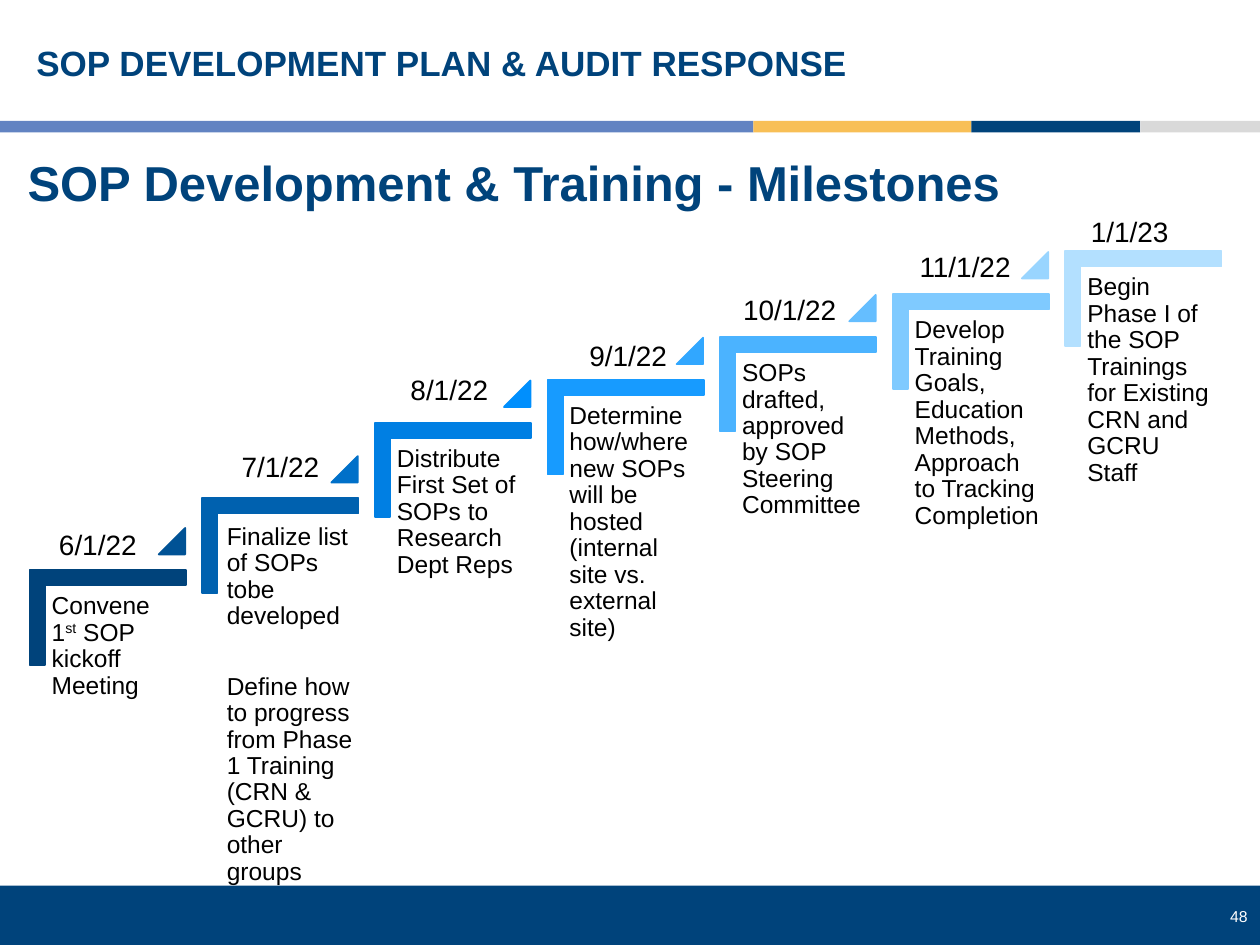
from dataclasses import dataclass

from pptx import Presentation
from pptx.dml.color import RGBColor
from pptx.enum.shapes import MSO_SHAPE
from pptx.enum.text import MSO_ANCHOR, PP_ALIGN
from pptx.util import Inches, Pt

RECT, CORNER, TRIANGLE = MSO_SHAPE.RECTANGLE, MSO_SHAPE.CORNER, MSO_SHAPE.ISOSCELES_TRIANGLE
MIDDLE, TOP = MSO_ANCHOR.MIDDLE, MSO_ANCHOR.TOP
LEFT, RIGHT = PP_ALIGN.LEFT, PP_ALIGN.RIGHT


@dataclass(frozen=True)
class Theme:
    font: str = "Arial"
    navy: str = "00437B"
    blue: str = "6283C2"
    gold: str = "F8BF56"
    grey: str = "D9D9D9"
    white: str = "FFFFFF"
    black: str = "000000"
    heading: int = 28
    title: int = 20
    date: int = 16
    body: int = 14
    number: int = 9


THEME = Theme()
TITLE = "SOP DEVELOPMENT PLAN & AUDIT RESPONSE"
HEADING = "SOP Development & Training - Milestones"
PAGE_NUMBER = "48"
BANDS = [(5.98, THEME.blue), (7.71, THEME.gold), (9.05, THEME.navy), (10, THEME.grey)]

# date, date position, bracket top, bracket colour, triangle colour, paragraphs
MILESTONES = [
    ("6/1/22", (0.37, 4.14), 4.28, "00437B", "005295", ["Convene 1^st^ SOP kickoff Meeting"]),
    ("7/1/22", (1.82, 3.52), 3.71, "0061AF", "0070C9", [
        "Finalize list of SOPs tobe developed",
        "Define how to progress from Phase 1 Training (CRN & GCRU) to other groups"]),
    ("8/1/22", (3.16, 2.91), 3.11, "007FE3", "008FFD", [
        "Distribute First Set of SOPs to Research Dept Reps"]),
    ("9/1/22", (4.58, 2.64), 2.77, "179BFF", "31A7FF", [
        "Determine how/where new SOPs will be hosted (internal site vs. external site)"]),
    ("10/1/22", (5.8, 2.27), 2.43, "4BB3FF", "65BEFF", [
        "SOPs drafted, approved by SOP Steering Committee"]),
    ("11/1/22", (7.2, 1.93), 2.09, "7FCAFF", "99D5FF", [
        "Develop Training Goals, Education Methods, Approach to Tracking Completion"]),
    ("1/1/23", (8.56, 1.65), 1.75, "B3E0FF", None, [
        "Begin Phase I of the SOP Trainings for Existing CRN and GCRU Staff"]),
]
FIRST_LEFT, STEP = 0.48, 1.37
BRACKET_SIZE = (0.75, 1.24)
BRACKET_THICKNESS = 0.161
TRIANGLE_SIZE = 0.21
PARAGRAPH_GAP = 25


def add_block(slide, preset, box, color, outlined=False):
    """Draw a flat preset shape."""
    block = slide.shapes.add_shape(preset, *map(Inches, box))
    block.shadow.inherit = False
    block.fill.solid()
    block.fill.fore_color.rgb = RGBColor.from_string(color)
    if outlined:
        block.line.color.rgb = RGBColor.from_string(color)
        block.line.width = Pt(1)
    else:
        block.line.fill.background()
    return block


def add_text(slide, box, paragraphs, size, color=THEME.black, bold=False, align=LEFT,
             anchor=TOP, spacing=None, inset=None, wrap=True):
    """Write paragraphs in which carets enclose superscripts."""
    frame = slide.shapes.add_textbox(*map(Inches, box)).text_frame
    frame.word_wrap = wrap
    frame.vertical_anchor = anchor
    if inset is not None:
        frame.margin_left = frame.margin_right = Inches(inset)
        frame.margin_top = frame.margin_bottom = Inches(inset)
    for index, text in enumerate(paragraphs):
        paragraph = frame.add_paragraph() if index else frame.paragraphs[0]
        paragraph.alignment = align
        paragraph.line_spacing = spacing
        if index:
            paragraph.space_before = Pt(PARAGRAPH_GAP)
        for part, wording in enumerate(text.split("^")):
            run = paragraph.add_run()
            run.text = wording
            run.font.name = THEME.font
            run.font.size = Pt(size)
            run.font.bold = bold
            run.font.color.rgb = RGBColor.from_string(color)
            if part % 2:
                run.font._element.set("baseline", "30000")


def add_milestone(slide, index, milestone):
    """Draw one stair with its date, bracket, triangle and wording."""
    date, date_position, top, bracket_color, triangle_color, wording = milestone
    left = FIRST_LEFT + index * STEP
    bracket = add_block(slide, CORNER, (left, top, *BRACKET_SIZE), bracket_color, True)
    bracket.rotation = 90
    bracket.adjustments[0] = bracket.adjustments[1] = BRACKET_THICKNESS
    nudge = 0.02 if len(wording) > 1 else 0
    add_text(slide, (left - 0.13 + nudge, top + 0.37 + nudge, 1.12, 0.98), wording,
             THEME.body, spacing=0.9, inset=0.06)
    if triangle_color:
        triangle = add_block(slide, TRIANGLE, (left + 0.78, top - 0.09, TRIANGLE_SIZE, TRIANGLE_SIZE),
                             triangle_color, True)
        triangle.adjustments[0] = 1
    add_text(slide, (*date_position, 1.03, 0.37), [date], THEME.date)


def main():
    """Build and save the milestones slide."""
    deck = Presentation()
    deck.slide_width, deck.slide_height = Inches(10), Inches(7.5)
    slide = deck.slides.add_slide(deck.slide_layouts[6])
    add_block(slide, RECT, (0, 7.03, 10, 0.47), THEME.navy)
    add_text(slide, (9.31, 7.15, 0.69, 0.25), [PAGE_NUMBER], THEME.number, THEME.white, align=RIGHT)
    start = 0
    for end, color in BANDS:
        add_block(slide, RECT, (start, 0.96, end - start, 0.09), color)
        start = end
    add_text(slide, (0.19, 0.17, 9.57, 0.69), [TITLE], THEME.title, THEME.navy, True,
             anchor=MIDDLE, spacing=0.9)
    add_text(slide, (0.12, 1.16, 8.01, 0.57), [HEADING], THEME.heading, THEME.navy, True, wrap=False)
    for index, milestone in enumerate(MILESTONES):
        add_milestone(slide, index, milestone)
    deck.save("out.pptx")


if __name__ == "__main__":
    main()
